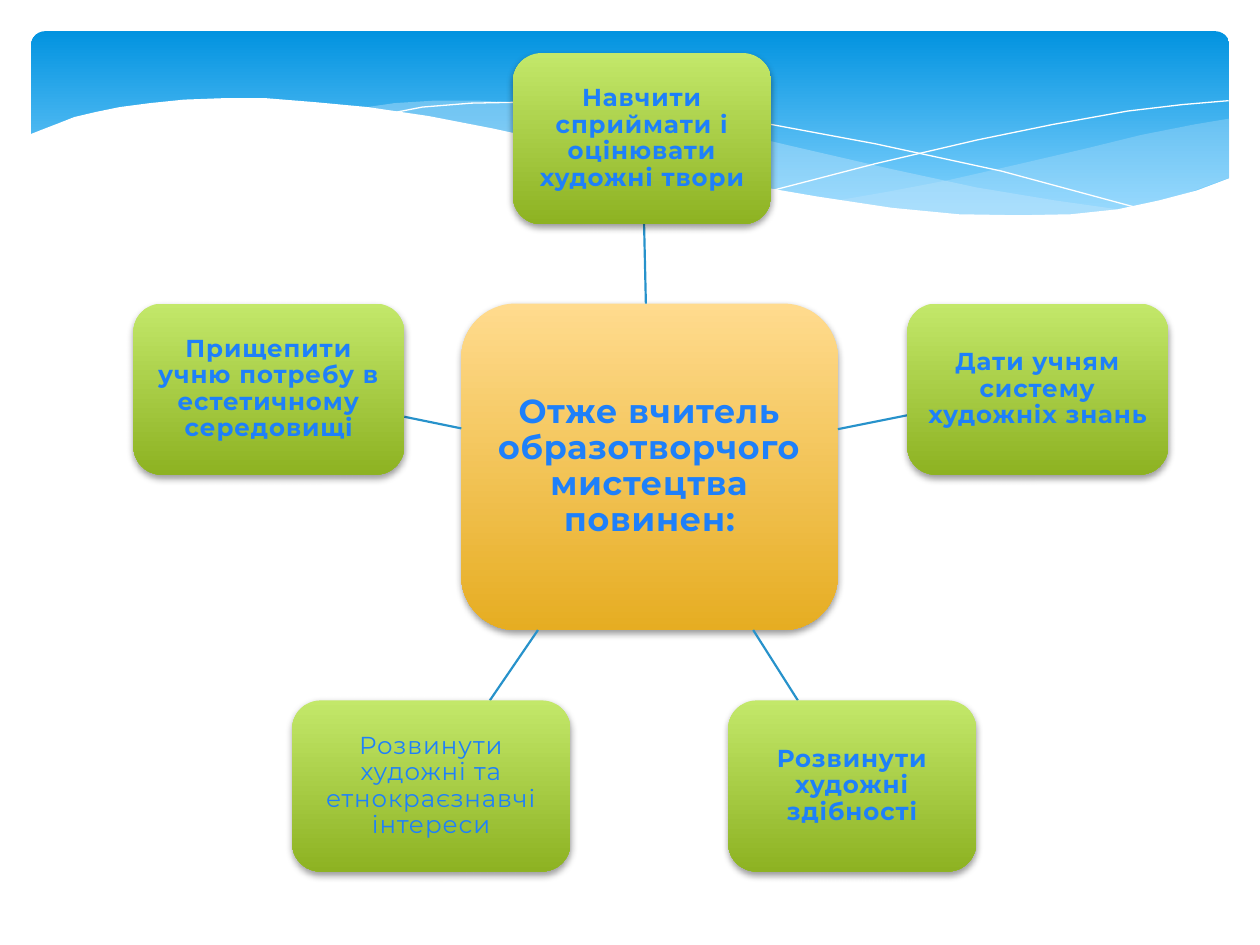
from lxml import etree
from pptx import Presentation
from pptx import util as u
from pptx.dml.color import RGBColor
from pptx.enum import shapes, text
from pptx.oxml import ns

HUES = {
    "sky": ("0293E0", "83D3FE"),
    "gold": ("FFDB8E", "E6AD22"),
    "lime": ("C3E86A", "8DB222"),
    "mist": "C6E7FC",
    "white": "FFFFFF",
    "link": "2792CB",
    "ink": "1E80FA",
    "shade": "000000",
}

# Outlines of the header waves, in centimetres
RIGHT = [(24.79, 2.39), (24.08, 2.51), (23.01, 2.72), (21.87, 3), (20.45, 3.33),
         (19.13, 3.63), (17.93, 3.86), (16.79, 4.06), (17.91, 4.19), (18.92, 4.29),
         (20.12, 4.37), (21.21, 4.37), (22.15, 4.29), (22.99, 4.14), (23.75, 3.96),
         (24.79, 3.58)]
LONG = [(22.68, 4.24), (21.26, 4.04), (19.69, 3.78), (17.93, 3.4), (15.98, 2.95),
        (14.45, 2.59), (13.06, 2.34), (11.81, 2.18), (10.67, 2.08), (9.65, 2.03),
        (8.74, 2.03), (7.95, 2.08), (7.26, 2.18), (8.69, 2.39), (10.26, 2.69),
        (11.4, 2.95), (13.46, 3.43), (15.27, 3.81), (16.89, 4.09), (18.34, 4.27),
        (19.63, 4.37), (20.78, 4.39), (21.77, 4.34)]
FALL = [(7.85, 2.29), (8.51, 2.16), (9.5, 2.08), (10.57, 2.06), (11.91, 2.11),
        (13.54, 2.24), (15.44, 2.49), (17.65, 2.9), (20.19, 3.45), (23.04, 4.22)]
RISE = [(15.57, 3.84), (17.65, 3.3), (19.71, 2.82), (21.23, 2.51), (22.73, 2.24),
        (23.83, 2.11), (24.77, 2.03)]
FRONT = [(24.82, 3.58), (24.13, 3.84), (23.37, 4.04), (22.53, 4.22), (21.59, 4.32),
         (20.55, 4.34), (19.33, 4.32), (17.98, 4.19), (16.46, 3.96), (14.71, 3.66),
         (12.78, 3.25), (11.35, 2.9), (9.93, 2.59), (8.64, 2.34), (7.42, 2.16),
         (6.35, 2.06), (5.36, 1.98), (4.5, 1.98), (3.71, 2.01), (3.02, 2.08),
         (2.41, 2.16), (1.93, 2.26), (1.5, 2.36), (1.17, 2.49), (0.91, 2.59),
         (0.58, 2.72), (0.58, 5.69), (24.82, 5.69)]

MID, LOW, HIGH = 6.12, 14.12, 3.45
HUB = (9.3, MID, 7.59, 6.58)
GOALS = [
    ((10.34, 1.07, 5.21, HIGH), "Навчити сприймати і оцінювати художні твори", True),
    ((18.29, MID, 5.26, HIGH), "Дати учням систему художніх знань", True),
    ((14.68, LOW, 5, HIGH), "Розвинути художні здібності", True),
    ((5.89, LOW, 5.61, HIGH), "Розвинути художні та етнокраєзнавчі інтереси", False),
    ((2.69, MID, 5.46, HIGH), "Прищепити учню потребу в естетичному середовищі", True),
]


def rgb(name):
    return RGBColor.from_string(HUES[name])


def sub(node, tag, **attrs):
    return etree.SubElement(node, ns.qn(tag), attrs)


def edge(box, goal):
    """Point where the line between the centres of two boxes leaves the first."""
    x, y, w, h = box
    mid_x, mid_y = x + w / 2, y + h / 2
    dx = goal[0] + goal[2] / 2 - mid_x
    dy = goal[1] + goal[3] / 2 - mid_y
    part = 1 / max(abs(dx) / (w / 2), abs(dy) / (h / 2))
    return mid_x + dx * part, mid_y + dy * part


class Board:
    """Style of the diagram and the slide it is drawn on."""
    font = "Montserrat"

    def __init__(self, slide):
        self.slide = slide
        self.items = slide.shapes

    def panel(self, box, hue, last=1.0):
        """Rounded box with a downward gradient that ends at the stop last."""
        item = self.items.add_shape(shapes.MSO_SHAPE.ROUNDED_RECTANGLE,
                                    *[u.Cm(n) for n in box])
        item.fill.gradient()
        item.fill.gradient_angle = 270
        stops = item.fill.gradient_stops
        for stop, color, place in zip(stops, HUES[hue], (0, last)):
            stop.color.rgb = RGBColor.from_string(color)
            stop.position = place
        item.line.fill.background()
        item.shadow.inherit = False
        return item

    def shade(self, item):
        glow = item._element.spPr.find(ns.qn("a:effectLst"))
        drop = sub(glow, "a:outerShdw", blurRad=str(u.Pt(4)), dist=str(u.Pt(2)),
                   dir="5400000", rotWithShape="0")
        color = sub(drop, "a:srgbClr", val=HUES["shade"])
        sub(color, "a:alpha", val="38000")

    def card(self, box, hue, words, size, inset, bold=True):
        item = self.panel(box, hue)
        self.shade(item)
        frame = item.text_frame
        frame.word_wrap = True
        frame.vertical_anchor = text.MSO_ANCHOR.MIDDLE
        frame.margin_left = frame.margin_right = u.Cm(inset)
        frame.margin_top = frame.margin_bottom = u.Cm(inset)
        para = frame.paragraphs[0]
        para.alignment = text.PP_ALIGN.CENTER
        para.line_spacing = 0.9
        run = para.add_run()
        run.text = words
        run.font.name = self.font
        run.font.size = u.Pt(size)
        run.font.bold = bold
        run.font.color.rgb = rgb("ink")
        run.font._element.set("spc", "50")

    def curve(self, dots, closed):
        dots = [(u.Cm(x), u.Cm(y)) for x, y in dots]
        pen = self.items.build_freeform(*dots[0])
        pen.add_line_segments(dots[1:], close=closed)
        item = pen.convert_to_shape()
        item.shadow.inherit = False
        return item

    def wave(self, dots, hue, alpha=100):
        item = self.curve(dots, True)
        item.fill.solid()
        item.fill.fore_color.rgb = rgb(hue)
        item.line.fill.background()
        color = item._element.spPr.find(ns.qn("a:solidFill"))[0]
        sub(color, "a:alpha", val=str(alpha * 1000))

    def thread(self, dots):
        item = self.curve(dots, False)
        item.fill.background()
        item.line.color.rgb = rgb("white")
        item.line.width = u.Pt(0)

    def link(self, start, end):
        ends = [u.Cm(n) for n in (*start, *end)]
        item = self.items.add_connector(shapes.MSO_CONNECTOR.STRAIGHT, *ends)
        item.line.color.rgb = rgb("link")
        item.line.width = u.Pt(1.25)
        sub(item._element.spPr, "a:effectLst")


def main():
    deck = Presentation()
    deck.slide_width, deck.slide_height = u.Cm(25.4), u.Cm(19.05)
    board = Board(deck.slides.add_slide(deck.slide_layouts[6]))

    head = board.panel((0.63, 0.63, 24.15, 3.97), "sky", last=0.9)
    head.adjustments[0] = 0.07
    board.wave(RIGHT, "mist", 29)
    board.wave(LONG, "mist", 40)
    board.thread(FALL)
    board.thread(RISE)
    board.wave(FRONT, "white")

    board.card(HUB, "gold", "Отже вчитель образотворчого мистецтва повинен:", 19, 0.13)
    for box, words, bold in GOALS:
        board.link(edge(HUB, box), edge(box, HUB))
        board.card(box, "lime", words, 14, 0.1, bold)
    deck.save("out.pptx")


if __name__ == "__main__":
    main()
